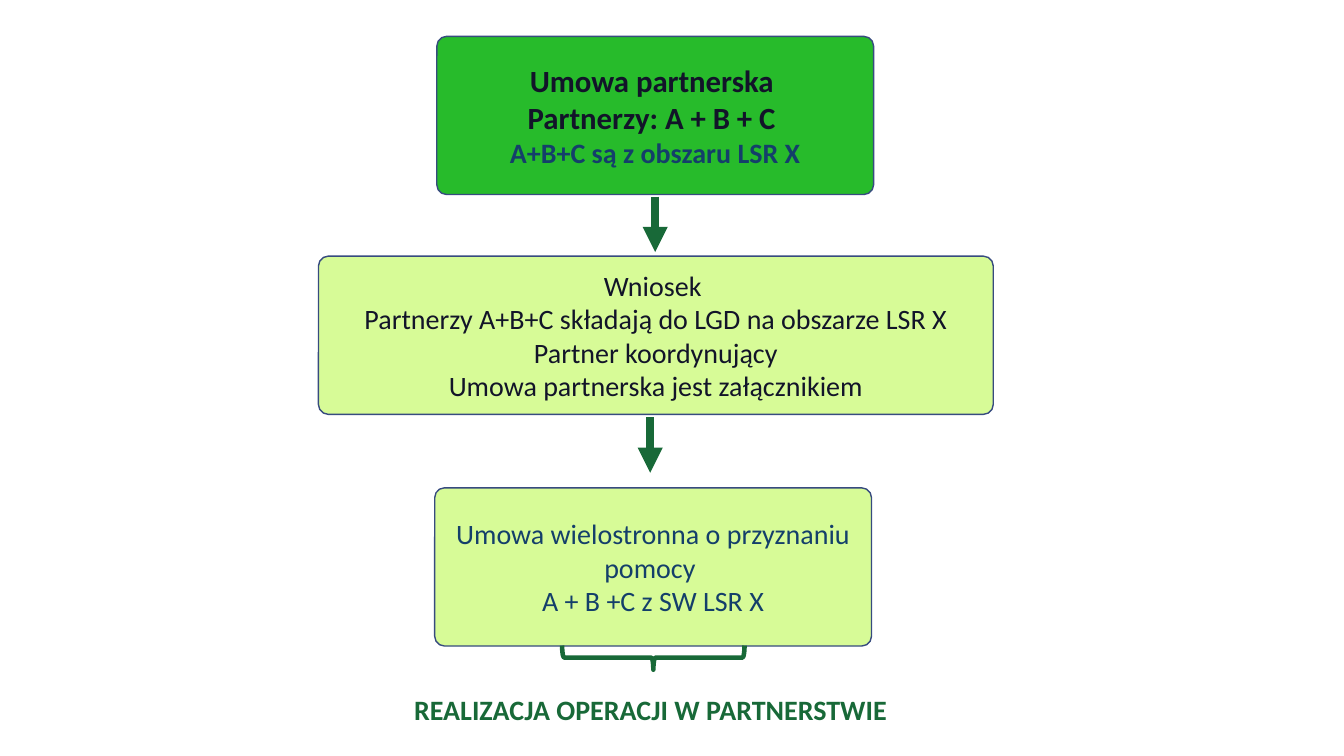
from lxml.etree import SubElement
from pptx import Presentation
from pptx.dml.color import RGBColor
from pptx.enum.shapes import MSO_CONNECTOR as CONNECTOR, MSO_SHAPE as SHAPE
from pptx.enum.text import MSO_ANCHOR as ANCHOR, MSO_AUTO_SIZE as AUTO_SIZE, PP_ALIGN as ALIGN
from pptx.oxml.ns import qn
from pptx.util import Pt

GREEN, LIME, DARK_GREEN = "27BB2B", "D7FB97", "186938"
INK, NAVY, BORDER = "121429", "143F6A", "374B7F"


def color(hex_code):
    """Turn a hex string into a colour."""
    return RGBColor.from_string(hex_code)


def write_lines(frame, lines, bold=False):
    """Write centred paragraphs from (text, size, colour) entries."""
    frame.word_wrap = True
    for index, (text, size, ink) in enumerate(lines):
        paragraph = frame.paragraphs[0] if index == 0 else frame.add_paragraph()
        paragraph.alignment = ALIGN.CENTER
        run = paragraph.add_run()
        run.text = text
        run.font.name = "Calibri"
        run.font.size = Pt(size)
        run.font.bold = bold
        run.font.color.rgb = color(ink)


def add_step(slide, left, top, width, fill, lines, bold=False):
    """Add one rounded box of the process."""
    height, radius = 113, 7
    step = slide.shapes.add_shape(
        SHAPE.ROUNDED_RECTANGLE, Pt(left), Pt(top), Pt(width), Pt(height))
    step.adjustments[0] = radius / height
    step.shadow.inherit = False
    step.fill.solid()
    step.fill.fore_color.rgb = color(fill)
    step.line.color.rgb = color(BORDER)
    step.line.width = Pt(1)
    step.text_frame.vertical_anchor = ANCHOR.MIDDLE
    write_lines(step.text_frame, lines, bold)


def add_down_arrow(slide, x, top):
    """Add a thick arrow leading to the next step."""
    arrow = slide.shapes.add_connector(
        CONNECTOR.STRAIGHT, Pt(x), Pt(top), Pt(x), Pt(top + 39.6))
    arrow.line.color.rgb = color(DARK_GREEN)
    arrow.line.width = Pt(6)
    SubElement(arrow.line._get_or_add_ln(), qn("a:tailEnd"), type="triangle")
    SubElement(arrow._element.spPr, qn("a:effectLst"))


def add_brace(slide, left, top, width, height):
    """Add a brace turned to point down."""
    brace = slide.shapes.add_shape(
        SHAPE.RIGHT_BRACE, Pt(left), Pt(top), Pt(width), Pt(height))
    brace.rotation = 90
    brace.shadow.inherit = False
    brace.fill.background()
    brace.line.color.rgb = color(DARK_GREEN)
    brace.line.width = Pt(3.25)


def add_caption(slide, left, top, width, height, text):
    """Add the bold closing caption."""
    caption = slide.shapes.add_textbox(Pt(left), Pt(top), Pt(width), Pt(height))
    write_lines(caption.text_frame, [(text, 20, DARK_GREEN)], bold=True)
    caption.text_frame.auto_size = AUTO_SIZE.SHAPE_TO_FIT_TEXT


def main():
    """Build the partnership process slide."""
    deck = Presentation()
    deck.slide_width, deck.slide_height = Pt(960), Pt(540)
    slide = deck.slides.add_slide(deck.slide_layouts[6])

    add_step(slide, 312, 26, 312, GREEN, [
        ("Umowa partnerska ", 22, INK),
        ("Partnerzy: A + B + C ", 22, INK),
        ("A+B+C są z obszaru LSR X", 20, NAVY),
    ], bold=True)
    add_step(slide, 227.5, 183, 482, LIME, [
        (text, 20, INK) for text in (
            "Wniosek ",
            "Partnerzy A+B+C składają do LGD na obszarze LSR X",
            "Partner koordynujący",
            "Umowa partnerska jest załącznikiem",
        )
    ])
    add_step(slide, 310.5, 348.5, 312, LIME, [
        ("Umowa wielostronna o przyznaniu pomocy ", 20, NAVY),
        ("A + B +C z SW LSR X", 20, NAVY),
    ])
    add_down_arrow(slide, 468, 140.4)
    add_down_arrow(slide, 464.4, 298.1)
    add_brace(slide, 458, 404.6, 17.3, 130.3)
    add_caption(slide, 265.7, 491, 398, 31.7, "REALIZACJA OPERACJI W PARTNERSTWIE")
    deck.save("out.pptx")


if __name__ == "__main__":
    main()
